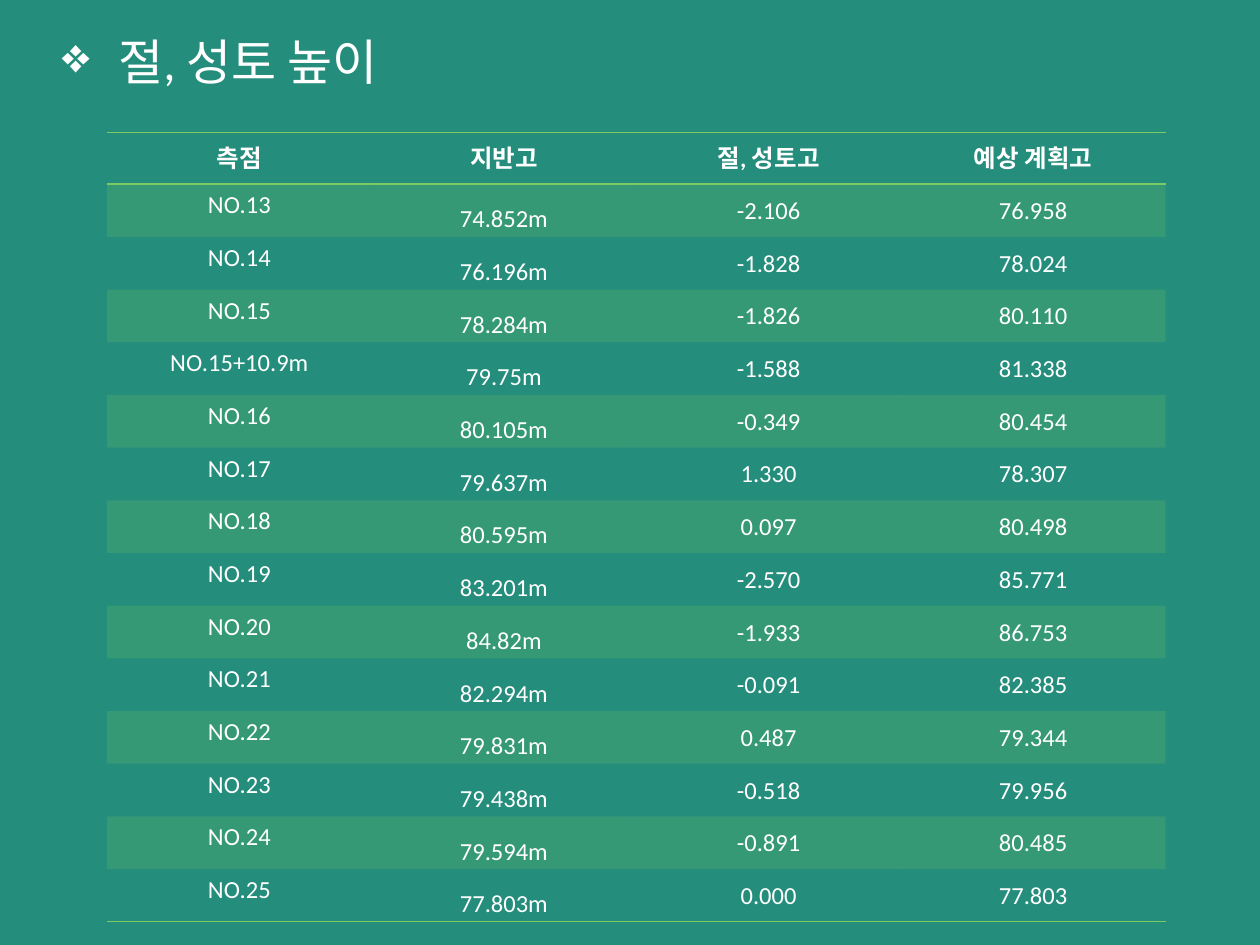
import dataclasses

import pptx
import pptx.dml.color
import pptx.enum.text
import pptx.oxml
import pptx.oxml.ns
import pptx.util
from pptx.util import Inches


@dataclasses.dataclass(frozen=True)
class Theme:
    background: str = "248D7B"
    accent: str = "7CCA62"
    text: str = "FFFFFF"
    font: str = "Calibri"
    title_size: int = 28
    table_size: int = 14
    band_opacity: int = 20
    border_width: int = 1


THEME = Theme()
NO_GRID_STYLE = "{2D5ABB26-0587-4C30-8999-92F81FD0307C}"
TOP = pptx.enum.text.MSO_ANCHOR.TOP
MIDDLE = pptx.enum.text.MSO_ANCHOR.MIDDLE

HEADERS = ("측점", "지반고", "절, 성토고", "예상 계획고")
STATIONS = (
    ("NO.13", "74.852m", "-2.106", "76.958"),
    ("NO.14", "76.196m", "-1.828", "78.024"),
    ("NO.15", "78.284m", "-1.826", "80.110"),
    ("NO.15+10.9m", "79.75m", "-1.588", "81.338"),
    ("NO.16", "80.105m", "-0.349", "80.454"),
    ("NO.17", "79.637m", "1.330", "78.307"),
    ("NO.18", "80.595m", "0.097", "80.498"),
    ("NO.19", "83.201m", "-2.570", "85.771"),
    ("NO.20", "84.82m", "-1.933", "86.753"),
    ("NO.21", "82.294m", "-0.091", "82.385"),
    ("NO.22", "79.831m", "0.487", "79.344"),
    ("NO.23", "79.438m", "-0.518", "79.956"),
    ("NO.24", "79.594m", "-0.891", "80.485"),
    ("NO.25", "77.803m", "0.000", "77.803"),
)

NAME_LAYOUT = (TOP, (0.1, 0.05, 0.1, 0.05), 1.0)
GROUND_LAYOUT = (MIDDLE, (0.07, 0.02, 0.07, 0.02), 1.6)
LEVEL_LAYOUT = (MIDDLE, (0.01, 0.01, 0.01, 0), 1.0)
COLUMN_LAYOUTS = (NAME_LAYOUT, GROUND_LAYOUT, LEVEL_LAYOUT, LEVEL_LAYOUT)


def color(value):
    return pptx.dml.color.RGBColor.from_string(value)


def format_runs(paragraph, size, bold=False):
    for run in paragraph.runs:
        run.font.name = THEME.font
        run.font.size = pptx.util.Pt(size)
        run.font.bold = bold
        run.font.color.rgb = color(THEME.text)


def set_margins(target, margins):
    target.margin_left, target.margin_top, target.margin_right, target.margin_bottom = map(
        Inches, margins
    )


def place_title(slide, text, left, top, width, height):
    title = slide.shapes.title
    title.left, title.top, title.width, title.height = left, top, width, height
    frame = title.text_frame
    frame.text = text
    frame.word_wrap = True
    frame.vertical_anchor = TOP
    set_margins(frame, (0.1, 0, 0.1, 0))
    paragraph = frame.paragraphs[0]
    paragraph.alignment = pptx.enum.text.PP_ALIGN.LEFT
    paragraph.space_before = pptx.util.Pt(4)
    format_runs(paragraph, THEME.title_size)
    properties = paragraph._p.get_or_add_pPr()
    properties.set("marL", str(Inches(0.45)))
    properties.set("indent", str(-Inches(0.45)))
    bullet = pptx.oxml.parse_xml(
        f'<a:buChar {pptx.oxml.ns.nsdecls("a")} char="❖"/>'
    )
    properties.append(bullet)


def fill_band(cell):
    cell.fill.solid()
    cell.fill.fore_color.rgb = color(THEME.accent)
    for value in cell._tc.tcPr.iter(pptx.oxml.ns.qn("a:srgbClr")):
        alpha = pptx.oxml.parse_xml(
            f'<a:alpha {pptx.oxml.ns.nsdecls("a")} val="{THEME.band_opacity * 1000}"/>'
        )
        value.append(alpha)


def add_borders(cell, sides):
    properties = cell._tc.get_or_add_tcPr()
    for index, side in enumerate(sides):
        border = pptx.oxml.parse_xml(
            f'<a:ln{side} {pptx.oxml.ns.nsdecls("a")} '
            f'w="{pptx.util.Pt(THEME.border_width)}">'
            f'<a:solidFill><a:srgbClr val="{THEME.accent}"/></a:solidFill></a:ln{side}>'
        )
        properties.insert(index, border)


def format_cell(cell, text, layout, bold):
    anchor, margins, line_spacing = layout
    cell.text_frame.text = text
    cell.vertical_anchor = anchor
    set_margins(cell, margins)
    paragraph = cell.text_frame.paragraphs[0]
    paragraph.alignment = pptx.enum.text.PP_ALIGN.CENTER
    paragraph.line_spacing = line_spacing
    format_runs(paragraph, THEME.table_size, bold)


def place_station_table(slide, left, top, width, height):
    rows = (HEADERS,) + STATIONS
    shape = slide.shapes.add_table(len(rows), len(HEADERS), left, top, width, height)
    for style in shape.element.iter(pptx.oxml.ns.qn("a:tableStyleId")):
        style.text = NO_GRID_STYLE
    for row_index, values in enumerate(rows):
        is_header = row_index == 0
        for column_index, text in enumerate(values):
            cell = shape.table.cell(row_index, column_index)
            layout = NAME_LAYOUT if is_header else COLUMN_LAYOUTS[column_index]
            format_cell(cell, text, layout, is_header)
            if row_index % 2:
                fill_band(cell)
            else:
                cell.fill.background()
            if is_header:
                add_borders(cell, "TB")
            elif row_index == len(rows) - 1:
                add_borders(cell, "B")


def main():
    presentation = pptx.Presentation()
    presentation.slide_width = Inches(10)
    presentation.slide_height = Inches(7.5)
    slide = presentation.slides.add_slide(presentation.slide_layouts.get_by_name("Title Only"))
    slide.background.fill.solid()
    slide.background.fill.fore_color.rgb = color(THEME.background)
    place_title(slide, "절, 성토 높이", Inches(0.39), Inches(0.25), Inches(8.4), Inches(0.67))
    place_station_table(slide, Inches(0.85), Inches(1.05), Inches(8.4), Inches(6.18))
    presentation.save("out.pptx")


if __name__ == "__main__":
    main()
